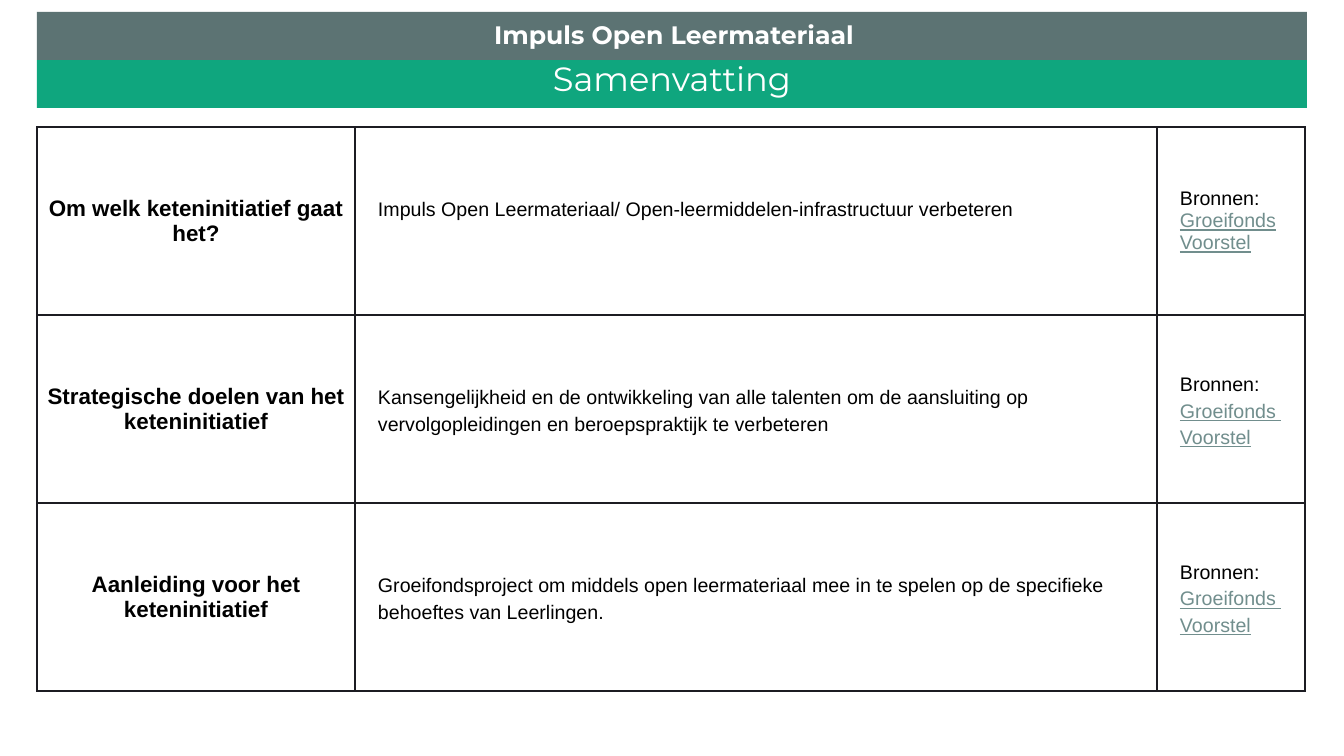
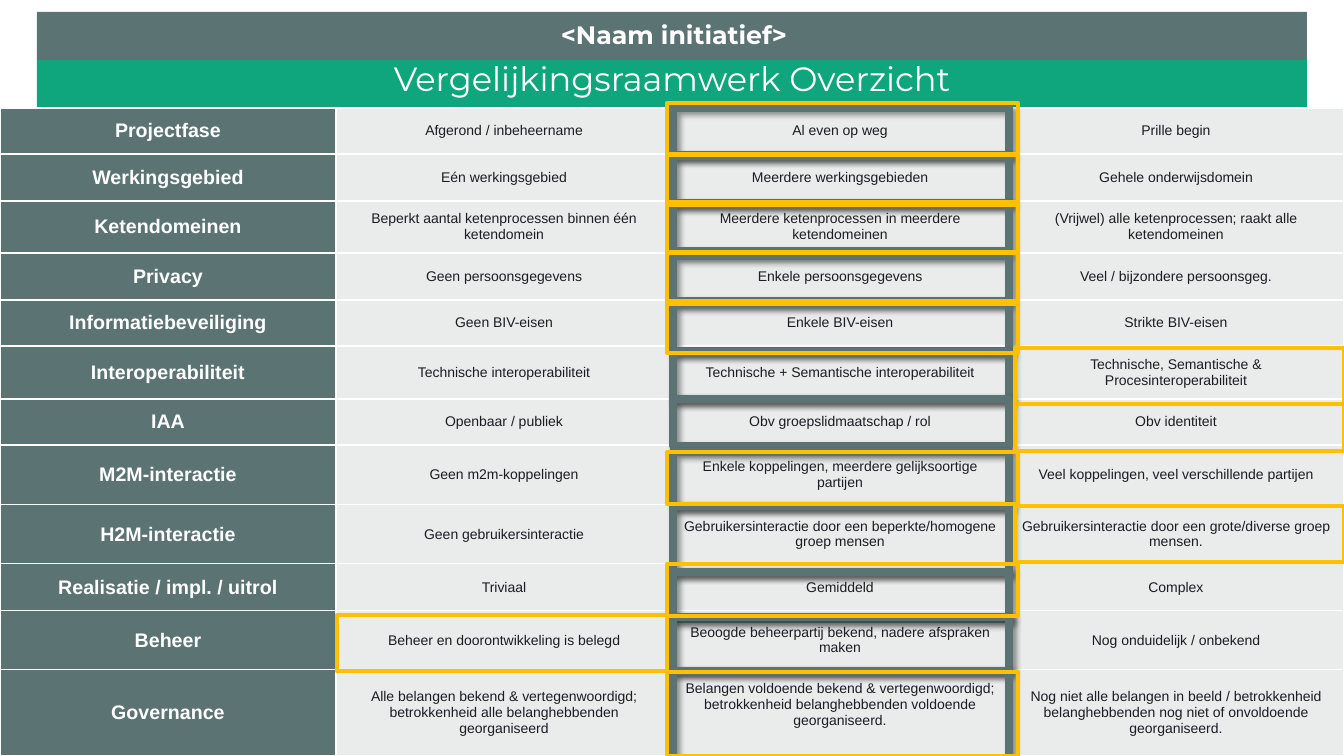
"""Build the summary and comparison framework slides for an open learning materials initiative."""
from lxml import etree
from pptx import Presentation
from pptx import util as u
from pptx.dml import color
from pptx.enum import shapes, text
from pptx.oxml import ns

EMU_PER_PX = 12192000 / 1344
SLATE, GREEN, WHITE, BLACK = "5C7373", "0FA67E", "FFFFFF", "000000"
INK, PALE, LINK, YELLOW = "1C1C22", "EAEBEB", "718E8D", "FFC000"
BODY_FONT, HEAD_FONT = "Arial", "Montserrat"
LEFT, CENTER = text.PP_ALIGN.LEFT, text.PP_ALIGN.CENTER
MIDDLE, BOTTOM = text.MSO_ANCHOR.MIDDLE, text.MSO_ANCHOR.BOTTOM

SUMMARY = [
    ("Om welk keteninitiatief gaat het?",
     "Impuls Open Leermateriaal/ Open-leermiddelen-infrastructuur verbeteren",
     ["Bronnen:", "Groeifonds Voorstel"], 1.0, 27),
    ("Strategische doelen van het keteninitiatief",
     "Kansengelijkheid en de ontwikkeling van alle talenten om de aansluiting op "
     "vervolgopleidingen en beroepspraktijk te verbeteren",
     ["Bronnen:", "Groeifonds ", "Voorstel"], 1.2, 5),
    ("Aanleiding voor het keteninitiatief",
     "Groeifondsproject om middels open leermateriaal mee in te spelen op de "
     "specifieke behoeftes van Leerlingen.",
     ["Bronnen:", "Groeifonds ", "Voorstel"], 1.2, 5),
]
SUMMARY_COLUMNS = [318, 802, 148]
SUMMARY_ROW = 188

# label, options, row height, frame (top, height), choice (column, top, height)
CRITERIA = [
    ("Projectfase", ["Afgerond / inbeheername", "Al even op weg", "Prille begin"],
     46, (108, 47), (2, 103, 52)),
    ("Werkingsgebied",
     ["Eén werkingsgebied", "Meerdere werkingsgebieden", "Gehele onderwijsdomein"],
     47, (156, 47), (2, 154, 51)),
    ("Ketendomeinen",
     ["Beperkt aantal ketenprocessen binnen één ketendomein",
      "Meerdere ketenprocessen in meerdere ketendomeinen",
      "(Vrijwel) alle ketenprocessen; raakt alle ketendomeinen"],
     52, (204, 47), (2, 202, 51)),
    ("Privacy",
     ["Geen persoonsgegevens", "Enkele persoonsgegevens", "Veel / bijzondere persoonsgeg."],
     47, (256, 45), (2, 252, 52)),
    ("Informatiebeveiliging", ["Geen BIV-eisen", "Enkele BIV-eisen", "Strikte BIV-eisen"],
     46, (304, 47), (2, 301, 52)),
    ("Interoperabiliteit",
     ["Technische interoperabiliteit", "Technische + Semantische interoperabiliteit",
      "Technische, Semantische & Procesinteroperabiliteit"],
     53, (352, 47), (3, 348, 56)),
    ("IAA", ["Openbaar / publiek", "Obv groepslidmaatschap / rol", "Obv identiteit"],
     46, (399, 47), (3, 404, 47)),
    ("M2M-interactie",
     ["Geen m2m-koppelingen", "Enkele koppelingen, meerdere gelijksoortige partijen",
      "Veel koppelingen, veel verschillende partijen"],
     60, (452, 54), (2, 452, 52)),
    ("H2M-interactie",
     ["Geen gebruikersinteractie",
      "Gebruikersinteractie door een beperkte/homogene groep mensen",
      "Gebruikersinteractie door een grote/diverse groep mensen."],
     59, (506, 66), (3, 506, 56)),
    ("Realisatie / impl. / uitrol", ["Triviaal", "Gemiddeld", "Complex"],
     47, (572, 47), (2, 564, 52)),
    ("Beheer",
     ["Beheer en doorontwikkeling is belegd",
      "Beoogde beheerpartij bekend, nadere afspraken maken",
      "Nog onduidelijk / onbekend"],
     59, (617, 54), (1, 615, 56)),
    ("Governance",
     ["Alle belangen bekend & vertegenwoordigd; betrokkenheid alle belanghebbenden "
      "georganiseerd",
      "Belangen voldoende bekend & vertegenwoordigd; betrokkenheid "
      "belanghebbenden voldoende georganiseerd.",
      "Nog niet alle belangen in beeld / betrokkenheid belanghebbenden nog niet of "
      "onvoldoende georganiseerd."],
     86, (671, 89), (2, 672, 84)),
]
CRITERIA_COLUMN = 336
CHOICE_SPANS = {1: (337, 330), 2: (667, 351), 3: (1015, 329)}


def px(length):
    return u.Emu(round(length * EMU_PER_PX))


def rgb(value):
    return color.RGBColor.from_string(value)


def write(frame, lines, size, ink, bold=False, font=BODY_FONT, align=CENTER, spacing=None):
    frame.text = "\n".join(lines)
    for paragraph in frame.paragraphs:
        paragraph.alignment = align
        paragraph.space_before = u.Pt(0)
        if spacing:
            paragraph.line_spacing = spacing
        for run in paragraph.runs:
            run.font.name, run.font.size, run.font.bold = font, u.Pt(size), bold
            run.font.color.rgb = rgb(ink)


def set_band(shape, top, height, fill, anchor, insets):
    shape.left, shape.top, shape.width, shape.height = map(px, (37, top, 1270, height))
    shape.fill.solid()
    shape.fill.fore_color.rgb = rgb(fill)
    shape.line.fill.background()
    frame = shape.text_frame
    frame.word_wrap, frame.auto_size = True, text.MSO_AUTO_SIZE.NONE
    frame.vertical_anchor = anchor
    (frame.margin_left, frame.margin_top,
     frame.margin_right, frame.margin_bottom) = map(px, insets)


def add_rectangle(slide, left, top, width, height):
    shape = slide.shapes.add_shape(shapes.MSO_SHAPE.RECTANGLE,
                                   *map(px, (left, top, width, height)))
    shape.shadow.inherit = False
    return shape


def add_headed_slide(presentation, initiative, heading):
    slide = presentation.slides.add_slide(presentation.slide_layouts[5])
    title = slide.shapes.title
    set_band(title, 60, 48, GREEN, BOTTOM, (10, 10, 10, 10))
    write(title.text_frame, [heading], 24, WHITE, font=HEAD_FONT)
    band = add_rectangle(slide, 37, 12, 1270, 48)
    set_band(band, 12, 48, SLATE, MIDDLE, (14, 0, 10, 3))
    write(band.text_frame, [initiative], 18, WHITE, True, HEAD_FONT)
    return slide


def add_grid(slide, left, top, columns, rows):
    table = slide.shapes.add_table(len(rows), len(columns), px(left), px(top),
                                   px(sum(columns)), px(sum(rows))).table
    table.first_row = table.horz_banding = False
    for column, width in zip(table.columns, columns):
        column.width = px(width)
    for row, height in zip(table.rows, rows):
        row.height = px(height)
    return table


def style_cell(cell, border, fill=None, inset=10, bottom=10):
    cell.vertical_anchor = MIDDLE
    cell.margin_left, cell.margin_right, cell.margin_top, cell.margin_bottom = map(
        px, (inset, 10 if inset == 10 else 5, 10 if inset == 10 else 5, bottom))
    properties = cell._tc.get_or_add_tcPr()
    for side in ("lnL", "lnR", "lnT", "lnB"):
        line = etree.SubElement(properties, ns.qn("a:" + side), w="12700")
        solid = etree.SubElement(line, ns.qn("a:solidFill"))
        etree.SubElement(solid, ns.qn("a:srgbClr"), val=border)
    if fill:
        cell.fill.solid()
        cell.fill.fore_color.rgb = rgb(fill)
    else:
        cell.fill.background()


def add_outline(slide, left, top, width, height, ink, weight, shadow=False):
    shape = add_rectangle(slide, left, top, width, height)
    shape.fill.background()
    shape.line.color.rgb = rgb(ink)
    shape.line.width = u.Pt(weight)
    if shadow:
        effects = shape._element.spPr.find(ns.qn("a:effectLst"))
        outer = etree.SubElement(effects, ns.qn("a:outerShdw"), blurRad="50800",
                                 dist="38100", dir="2700000", algn="tl", rotWithShape="0")
        shade = etree.SubElement(outer, ns.qn("a:srgbClr"), val=BLACK)
        etree.SubElement(shade, ns.qn("a:alpha"), val="40000")


def build_summary(presentation):
    slide = add_headed_slide(presentation, "Impuls Open Leermateriaal", "Samenvatting")
    table = add_grid(slide, 37, 127, SUMMARY_COLUMNS, [SUMMARY_ROW] * len(SUMMARY))
    for row, (question, answer, sources, spacing, bottom) in enumerate(SUMMARY):
        question_cell, answer_cell, source_cell = (table.cell(row, i) for i in range(3))
        style_cell(question_cell, INK)
        write(question_cell.text_frame, [question], 16, BLACK, True)
        style_cell(answer_cell, INK, inset=23, bottom=bottom)
        write(answer_cell.text_frame, [answer], 14, BLACK, align=LEFT, spacing=spacing)
        style_cell(source_cell, INK, inset=23, bottom=5)
        write(source_cell.text_frame, sources, 14, BLACK, align=LEFT, spacing=spacing)
        for paragraph in source_cell.text_frame.paragraphs[1:]:
            for run in paragraph.runs:
                run.font.underline = True
                run.font.color.rgb = rgb(LINK)


def build_framework(presentation):
    slide = add_headed_slide(presentation, "<Naam initiatief>",
                             "Vergelijkingsraamwerk Overzicht")
    table = add_grid(slide, 0, 108, [CRITERIA_COLUMN] * 4, [row[2] for row in CRITERIA])
    for row, (label, options, *_) in enumerate(CRITERIA):
        label_cell = table.cell(row, 0)
        style_cell(label_cell, WHITE, SLATE)
        write(label_cell.text_frame, [label], 14, WHITE, True)
        for column, option in enumerate(options, 1):
            cell = table.cell(row, column)
            raised = label == "Governance" and column == 2
            style_cell(cell, WHITE, PALE, bottom=26 if raised else 10)
            write(cell.text_frame, [option], 10, INK)
    for *_, (top, height), _ in CRITERIA:
        add_outline(slide, 673, top, CRITERIA_COLUMN, height, SLATE, 6, shadow=True)
    for *_, (column, top, height) in CRITERIA:
        left, width = CHOICE_SPANS[column]
        add_outline(slide, left, top, width, height, YELLOW, 3)


def main():
    presentation = Presentation()
    presentation.slide_width, presentation.slide_height = px(1344), px(756)
    build_summary(presentation)
    build_framework(presentation)
    presentation.save("out.pptx")


if __name__ == "__main__":
    main()
